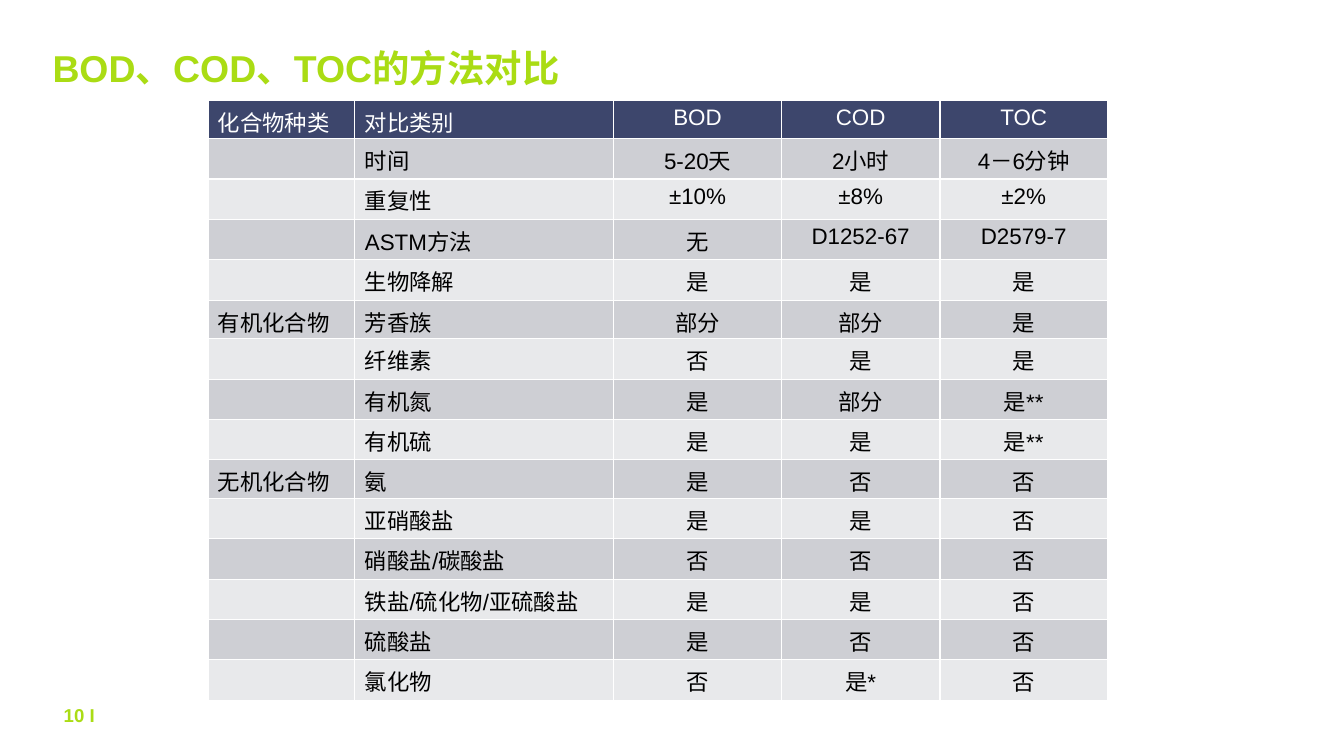
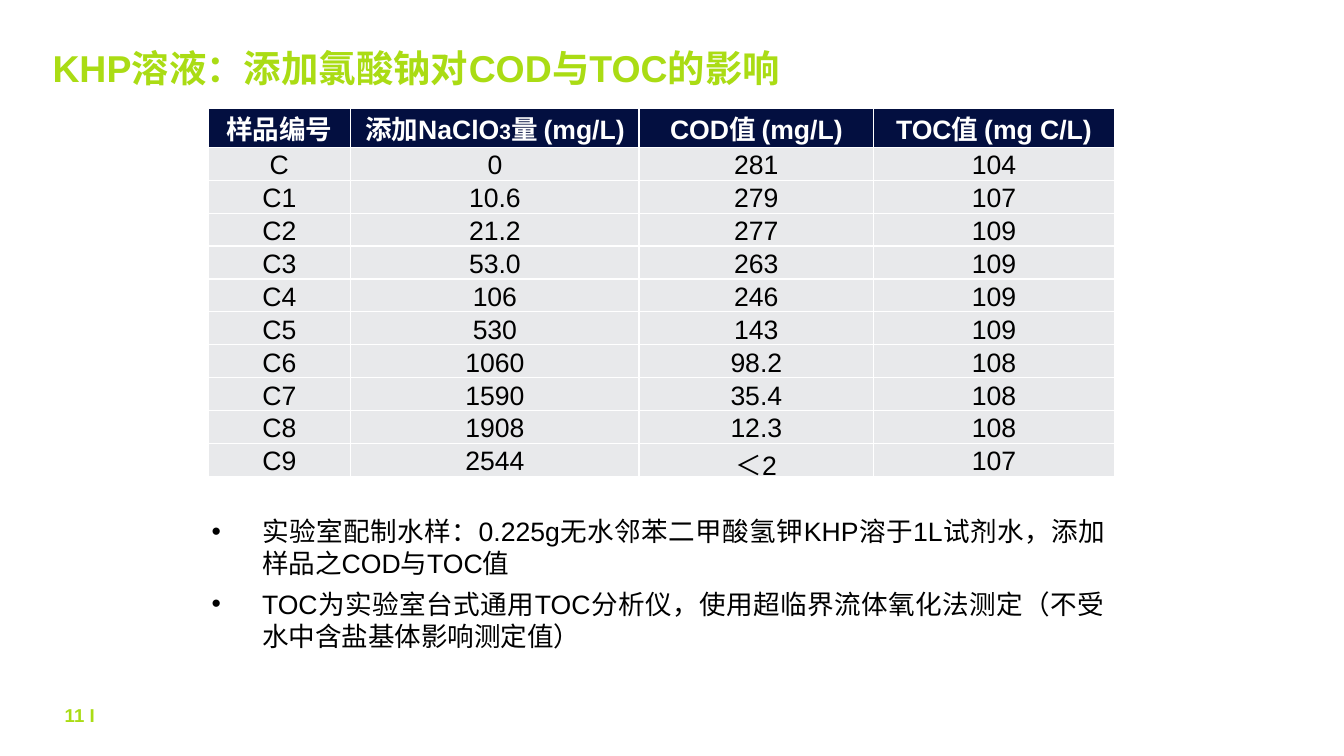
from pptx import Presentation
from pptx.dml.color import RGBColor
from pptx.enum.text import MSO_ANCHOR, MSO_AUTO_SIZE, PP_ALIGN
from pptx.util import Pt

GREEN = RGBColor(0xAA, 0xDC, 0x14)
SLATE = RGBColor(0x3D, 0x46, 0x6C)
NAVY = RGBColor(0x03, 0x0F, 0x40)
GREY = RGBColor(0xCE, 0xCF, 0xD4)
PALE = RGBColor(0xE8, 0xE9, 0xEB)
WHITE = RGBColor(0xFF, 0xFF, 0xFF)
BLACK = RGBColor(0, 0, 0)
LEFT, CENTER = PP_ALIGN.LEFT, PP_ALIGN.CENTER


def style(p, size, color, bold=False, align=LEFT):
    p.alignment = align
    for r in p.runs:
        r.font.name = "Arial"
        r.font.size = Pt(size)
        r.font.bold = bold
        r.font.color.rgb = color


def add_table(s, left, top, widths, heights, rows, size, fills, aligns, bold_header):
    shape = s.shapes.add_table(len(rows), len(widths), Pt(left), Pt(top),
                               Pt(sum(widths)), Pt(sum(heights)))
    table = shape.table
    for column, width in zip(table.columns, widths):
        column.width = Pt(width)
    for i, (row, height) in enumerate(zip(rows, heights)):
        table.rows[i].height = Pt(height)
        for j, text in enumerate(row):
            cell = table.cell(i, j)
            cell.fill.solid()
            cell.fill.fore_color.rgb = fills[0] if i == 0 else fills[1 + (i - 1) % 2]
            cell.text = text
            style(cell.text_frame.paragraphs[0], size, BLACK if i else WHITE,
                  bold_header and i == 0, aligns[j])
    return table


prs = Presentation()
prs.slide_width, prs.slide_height = Pt(960), Pt(540)

pages = [
    (5, "BOD、COD、TOC的方法对比", "10 I"),
    (1, "KHP溶液：添加氯酸钠对COD与TOC的影响", "11 I"),
]
slides = []
for layout, title, page in pages:
    s = prs.slides.add_slide(prs.slide_layouts[layout])
    slides.append(s)

    sp = s.shapes.title
    sp.left, sp.top, sp.width, sp.height = Pt(37.5), Pt(36), Pt(831.5), Pt(98.5)
    tf = sp.text_frame
    tf.text = title
    tf.auto_size = MSO_AUTO_SIZE.NONE
    tf.vertical_anchor = MSO_ANCHOR.TOP
    tf.margin_left = tf.margin_top = tf.margin_right = tf.margin_bottom = 0
    tf.paragraphs[0].line_spacing = 0.9
    style(tf.paragraphs[0], 26.7, GREEN, True)

    tf = s.shapes.add_textbox(0, Pt(502.5), Pt(72), Pt(36.5)).text_frame
    tf.word_wrap = True
    tf.margin_left = tf.margin_top = tf.margin_bottom = 0
    tf.margin_right = Pt(4.3)
    tf.text = page
    style(tf.paragraphs[0], 13.3, GREEN, True, PP_ALIGN.RIGHT)

methods = [
    ("化合物种类", "对比类别", "BOD", "COD", "TOC"),
    ("", "时间", "5-20天", "2小时", "4－6分钟"),
    ("", "重复性", "±10%", "±8%", "±2%"),
    ("", "ASTM方法", "无", "D1252-67", "D2579-7"),
    ("", "生物降解", "是", "是", "是"),
    ("有机化合物", "芳香族", "部分", "部分", "是"),
    ("", "纤维素", "否", "是", "是"),
    ("", "有机氮", "是", "部分", "是**"),
    ("", "有机硫", "是", "是", "是**"),
    ("无机化合物", "氨", "是", "否", "否"),
    ("", "亚硝酸盐", "是", "是", "否"),
    ("", "硝酸盐/碳酸盐", "否", "否", "否"),
    ("", "铁盐/硫化物/亚硫酸盐", "是", "是", "否"),
    ("", "硫酸盐", "是", "否", "否"),
    ("", "氯化物", "否", "是*", "否"),
]
add_table(slides[0], 148.5, 71.5, [105, 185, 119.5, 113.5, 119.5],
          [27.6] * len(methods), methods, 16, (SLATE, GREY, PALE),
          [LEFT, LEFT, CENTER, CENTER, CENTER], False)

samples = [
    ("样品编号", "添加NaClO", "COD值 (mg/L)", "TOC值 (mg C/L)"),
    ("C", "0", "281", "104"),
    ("C1", "10.6", "279", "107"),
    ("C2", "21.2", "277", "109"),
    ("C3", "53.0", "263", "109"),
    ("C4", "106", "246", "109"),
    ("C5", "530", "143", "109"),
    ("C6", "1060", "98.2", "108"),
    ("C7", "1590", "35.4", "108"),
    ("C8", "1908", "12.3", "108"),
    ("C9", "2544", "＜2", "107"),
]
table = add_table(slides[1], 148.5, 77.3, [102, 206, 167.5, 172],
                  [28] + [23.5] * (len(samples) - 1), samples, 19,
                  (NAVY, PALE, PALE), [CENTER] * 4, True)
table.first_row = False
for i, row in enumerate(table.rows):
    for cell in row.cells:
        cell.vertical_anchor = MSO_ANCHOR.BOTTOM if i else MSO_ANCHOR.MIDDLE
        cell.margin_left = cell.margin_top = cell.margin_right = Pt(0.7)
        cell.margin_bottom = 0
p = table.cell(0, 1).text_frame.paragraphs[0]
for text in ("3", "量 (mg/L)"):
    p.add_run().text = text
style(p, 19, WHITE, True, CENTER)
p.runs[1].font.size = Pt(15)

notes = [
    "实验室配制水样：0.225g无水邻苯二甲酸氢钾KHP溶于1L试剂水，添加样品之COD与TOC值",
    "TOC为实验室台式通用TOC分析仪，使用超临界流体氧化法测定（不受水中含盐基体影响测定值）",
]
sp = slides[1].placeholders[1]
sp.left, sp.top, sp.width, sp.height = Pt(144), Pt(364.5), Pt(652.5), Pt(105)
tf = sp.text_frame
tf.auto_size = MSO_AUTO_SIZE.NONE
tf.text = "\n".join(notes)
for i, p in enumerate(tf.paragraphs):
    pPr = p._p.get_or_add_pPr()
    pPr.set("marL", str(Pt(36)))
    pPr.set("indent", str(-Pt(36)))
    p.space_before = Pt(6 if i else 0)
    style(p, 19, BLACK, align=PP_ALIGN.JUSTIFY)

prs.save("out.pptx")
